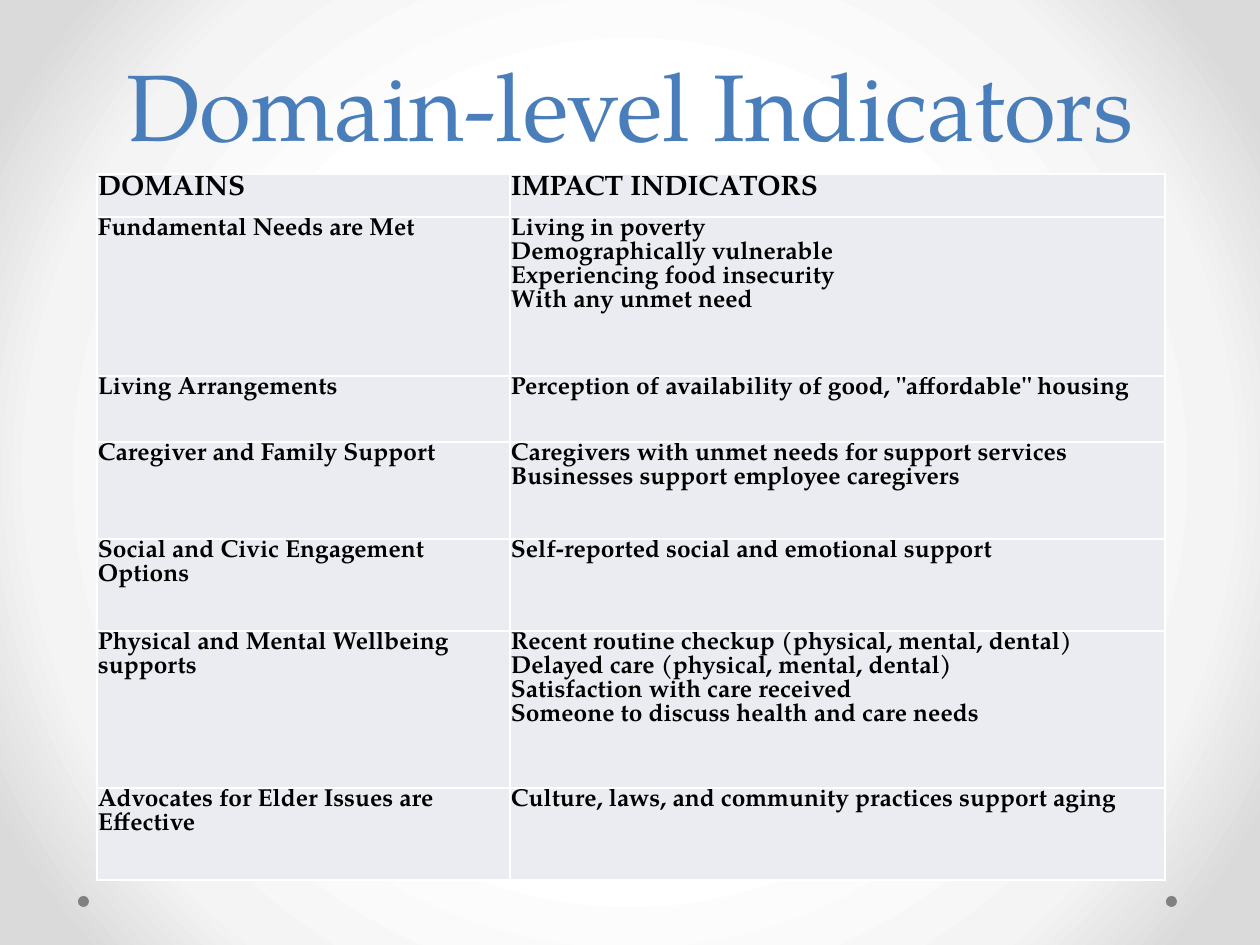
from dataclasses import dataclass

from pptx import Presentation
from pptx.dml.color import RGBColor
from pptx.enum.shapes import MSO_SHAPE
from pptx.enum.text import MSO_ANCHOR, PP_ALIGN
from pptx.oxml import parse_xml
from pptx.oxml.ns import nsdecls
from pptx.util import Pt

SCALE = 914400 / 126


@dataclass(frozen=True)
class Theme:
    """Colours, font and type sizes of the slide."""
    font: str = "TeX Gyre Pagella"
    title: str = "4A7EBB"
    ink: str = "000000"
    cell: str = "EAECF2"
    rule: str = "FFFFFF"
    dot: str = "808080"
    glow: tuple = ((50, "FFFFFF"), (76, "F4F4F4"), (92, "DADADA"))
    big: int = 54
    head: int = 16
    body: int = 14


THEME = Theme()
COLS = (413, 655)
ROWS = (
    (43, "DOMAINS", ("IMPACT INDICATORS",)),
    (159, "Fundamental Needs are Met", (
        "Living in poverty", "Demographically vulnerable",
        "Experiencing food insecurity", "With any unmet need")),
    (66, "Living Arrangements", (
        'Perception of availability of good, "affordable" housing',)),
    (97, "Caregiver and Family Support", (
        "Caregivers with unmet needs for support services",
        "Businesses support employee caregivers")),
    (92, "Social and Civic Engagement Options", (
        "Self-reported social and emotional support",)),
    (157, "Physical and Mental Wellbeing supports", (
        "Recent routine checkup (physical, mental, dental)",
        "Delayed care (physical, mental, dental)",
        "Satisfaction with care received",
        "Someone to discuss health and care needs")),
    (92, "Advocates for Elder Issues are Effective", (
        "Culture, laws, and community practices support aging",)),
)


def px(num):
    """Turn px into EMU."""
    return round(num * SCALE)


def add_run(para, text, size, color, bold=False):
    """Add one styled run to a paragraph."""
    run = para.add_run()
    run.text = text
    font = run.font
    font.name, font.size, font.bold = THEME.font, Pt(size), bold
    font.color.rgb = RGBColor.from_string(color)


def set_glow(slide):
    """Give the slide a round gradient background."""
    stops = "".join(
        f'<a:gs pos="{pos * 1000}"><a:srgbClr val="{tint}"/></a:gs>'
        for pos, tint in THEME.glow)
    back = parse_xml(
        f'<p:bg {nsdecls("p", "a")}><p:bgPr><a:gradFill rotWithShape="1">'
        f'<a:gsLst>{stops}</a:gsLst><a:path path="circle">'
        '<a:fillToRect l="50000" t="50000" r="50000" b="50000"/></a:path>'
        '</a:gradFill><a:effectLst/></p:bgPr></p:bg>')
    slide.element.cSld.insert(0, back)


def add_dot(slide, left):
    """Add one grey dot at the foot of the slide."""
    dot = slide.shapes.add_shape(
        MSO_SHAPE.OVAL, px(left), px(896), px(11), px(11))
    dot.shadow.inherit = False
    dot.fill.solid()
    dot.fill.fore_color.rgb = RGBColor.from_string(THEME.dot)
    dot.line.fill.background()


def add_title(slide, text):
    """Add the centred title."""
    frame = slide.shapes.add_textbox(
        px(63), 0, px(1134), px(220)).text_frame
    frame.word_wrap = True
    frame.vertical_anchor = MSO_ANCHOR.MIDDLE
    para = frame.paragraphs[0]
    para.alignment = PP_ALIGN.CENTER
    para.line_spacing = Pt(58)
    add_run(para, text, THEME.big, THEME.title)


def set_rules(cell):
    """Draw thin lines on all sides of a cell."""
    props = cell._tc.get_or_add_tcPr()
    for spot, side in enumerate("LRTB"):
        props.insert(spot, parse_xml(
            f'<a:ln{side} {nsdecls("a")} w="12700"><a:solidFill>'
            f'<a:srgbClr val="{THEME.rule}"/></a:solidFill></a:ln{side}>'))


def fill_cell(cell, lines, size):
    """Fill a cell with lines of bold text."""
    cell.fill.solid()
    cell.fill.fore_color.rgb = RGBColor.from_string(THEME.cell)
    cell.margin_left = cell.margin_right = cell.margin_top = px(1)
    cell.margin_bottom = 0
    set_rules(cell)
    para = cell.text_frame.paragraphs[0]
    for num, line in enumerate(lines):
        if num:
            para.add_line_break()
        add_run(para, line, size, THEME.ink, True)


def add_grid(slide):
    """Add the table of domains and indicators."""
    high = sum(row[0] for row in ROWS)
    grid = slide.shapes.add_table(
        len(ROWS), len(COLS), px(97), px(174), px(sum(COLS)), px(high)).table
    for col, wide in zip(grid.columns, COLS):
        col.width = px(wide)
    for num, (tall, name, marks) in enumerate(ROWS):
        grid.rows[num].height = px(tall)
        size = THEME.body if num else THEME.head
        fill_cell(grid.cell(num, 0), (name,), size)
        fill_cell(grid.cell(num, 1), marks, size)


def main():
    """Build and save the slide."""
    deck = Presentation()
    deck.slide_width, deck.slide_height = px(1260), px(945)
    slide = deck.slides.add_slide(deck.slide_layouts[6])
    set_glow(slide)
    for left in (1166, 78):
        add_dot(slide, left)
    add_title(slide, "Domain-level Indicators")
    add_grid(slide)
    deck.save("out.pptx")


if __name__ == "__main__":
    main()
